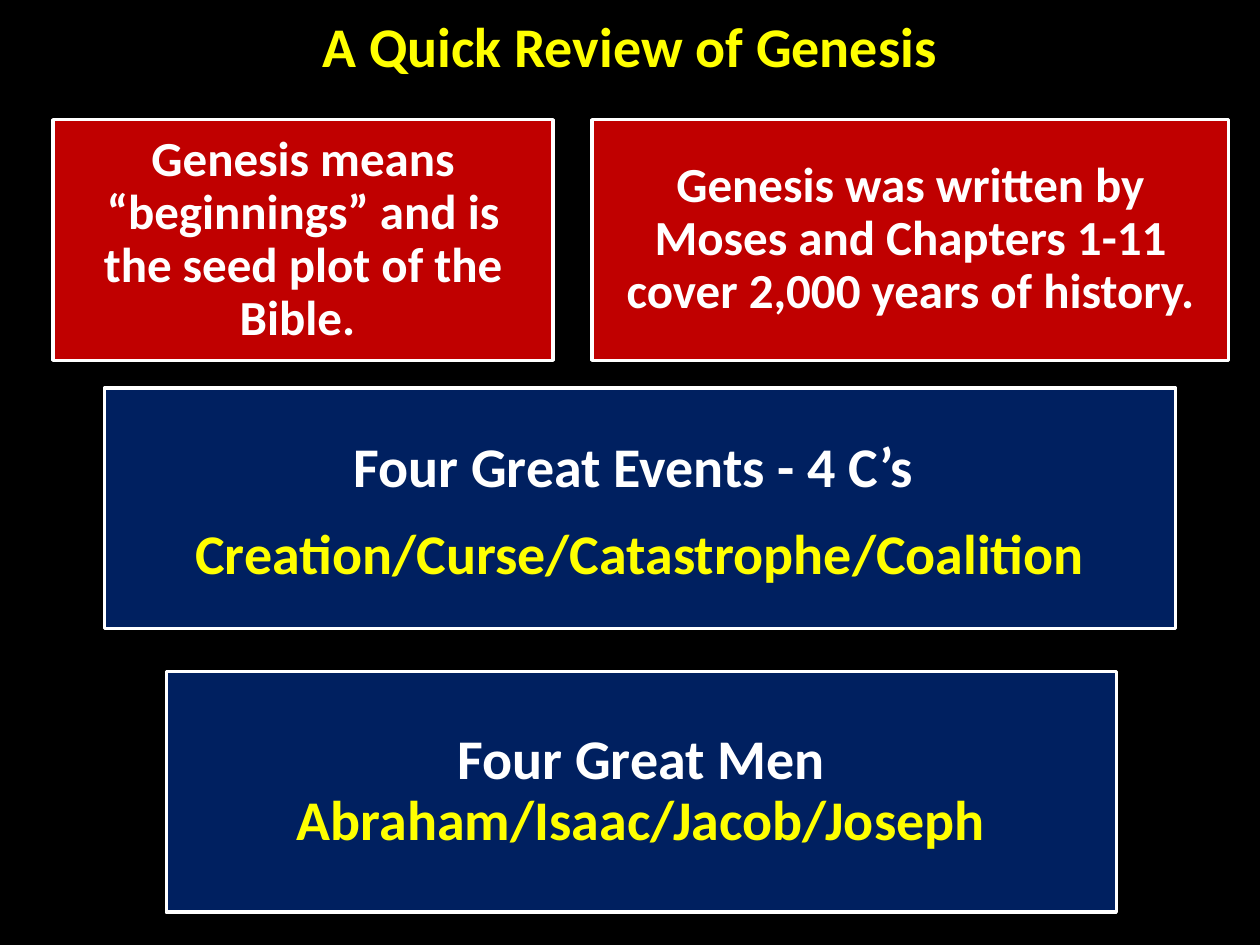
from pptx import Presentation
from pptx.dml.color import RGBColor
from pptx.enum.shapes import MSO_SHAPE
from pptx.enum.text import MSO_ANCHOR, PP_ALIGN
from pptx.util import Inches, Pt

RECT = MSO_SHAPE.RECTANGLE
MIDDLE = MSO_ANCHOR.MIDDLE
CENTER = PP_ALIGN.CENTER


class Theme:
    black = RGBColor(0, 0, 0)
    white = RGBColor(255, 255, 255)
    yellow = RGBColor(255, 255, 0)
    red = RGBColor(192, 0, 0)
    navy = RGBColor(0, 32, 96)
    font = "Calibri"
    body = 28
    head = 32
    edge = Pt(2)


def apply(target, values):
    for name, value in values.items():
        setattr(target, name, value)


class Deck:
    def __init__(self, theme):
        self.theme = theme
        self.prs = Presentation()
        apply(self.prs, {"slide_width": Inches(10), "slide_height": Inches(7.5)})
        self.slide = self.prs.slides.add_slide(self.prs.slide_layouts[6])
        fill = self.slide.background.fill
        fill.solid()
        fill.fore_color.rgb = theme.black

    def label(self, shape, paras, size, pad, space, after):
        frame = shape.text_frame
        sides = ("margin_left", "margin_top", "margin_right", "margin_bottom")
        apply(frame, dict(zip(sides, map(Inches, pad))))
        apply(frame, {"word_wrap": True, "vertical_anchor": MIDDLE})
        for i, runs in enumerate(paras):
            para = frame.add_paragraph() if i else frame.paragraphs[0]
            apply(para, {"alignment": CENTER, "line_spacing": space,
                         "space_after": Pt(after)})
            for text, color in runs:
                run = para.add_run()
                run.text = text
                apply(run.font, {"name": self.theme.font, "size": Pt(size), "bold": True})
                run.font.color.rgb = color

    def title(self, text, area):
        box = self.slide.shapes.add_textbox(*map(Inches, area))
        paras = [[(text, self.theme.yellow)]]
        self.label(box, paras, self.theme.head, (0.1, 0.05, 0.1, 0.05), 1.0, 0)

    def panel(self, area, color, paras, size, pad, space=0.9):
        box = self.slide.shapes.add_shape(RECT, *map(Inches, area))
        box.shadow.inherit = False
        box.fill.solid()
        box.fill.fore_color.rgb = color
        box.line.color.rgb = self.theme.white
        box.line.width = self.theme.edge
        self.label(box, paras, size, (pad,) * 4, space, round(size * 0.35))


def main():
    theme = Theme()
    deck = Deck(theme)
    white, yellow = theme.white, theme.yellow
    high = 1.91

    deck.title("A Quick Review of Genesis", (0.5, 0.05, 9, 0.62))

    facts = [
        (0.42, 3.97, "Genesis means “beginnings” and is the seed plot of the Bible. "),
        (4.7, 5.05, "Genesis was written by Moses and Chapters 1-11 cover 2,000 years of history."),
    ]
    for left, width, text in facts:
        deck.panel((left, 0.95, width, high), theme.red, [[(text, white)]], theme.body, 0.12)

    events = [[("Four Great Events - 4 C’s ", white)],
              [("Creation/Curse/Catastrophe/Coalition", yellow)]]
    men = [[("Four Great Men ", white), ("Abraham/Isaac/Jacob/Joseph", yellow)]]
    groups = [(0.83, 3.08, 8.5, events, 1.0), (1.32, 5.33, 7.54, men, 0.9)]
    for left, top, width, paras, space in groups:
        deck.panel((left, top, width, high), theme.navy, paras, theme.head, 0.13, space)

    deck.prs.save("out.pptx")


if __name__ == "__main__":
    main()
